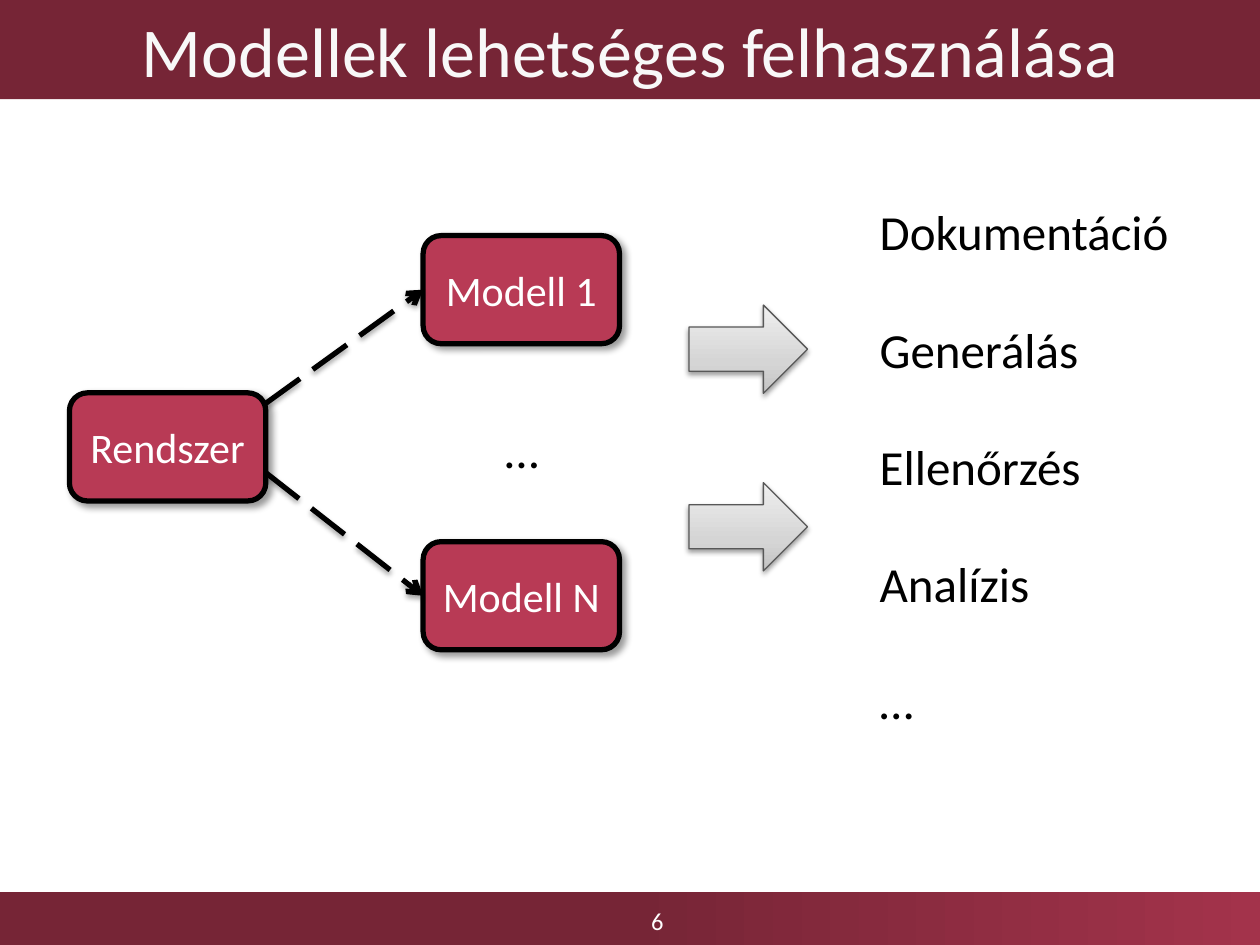
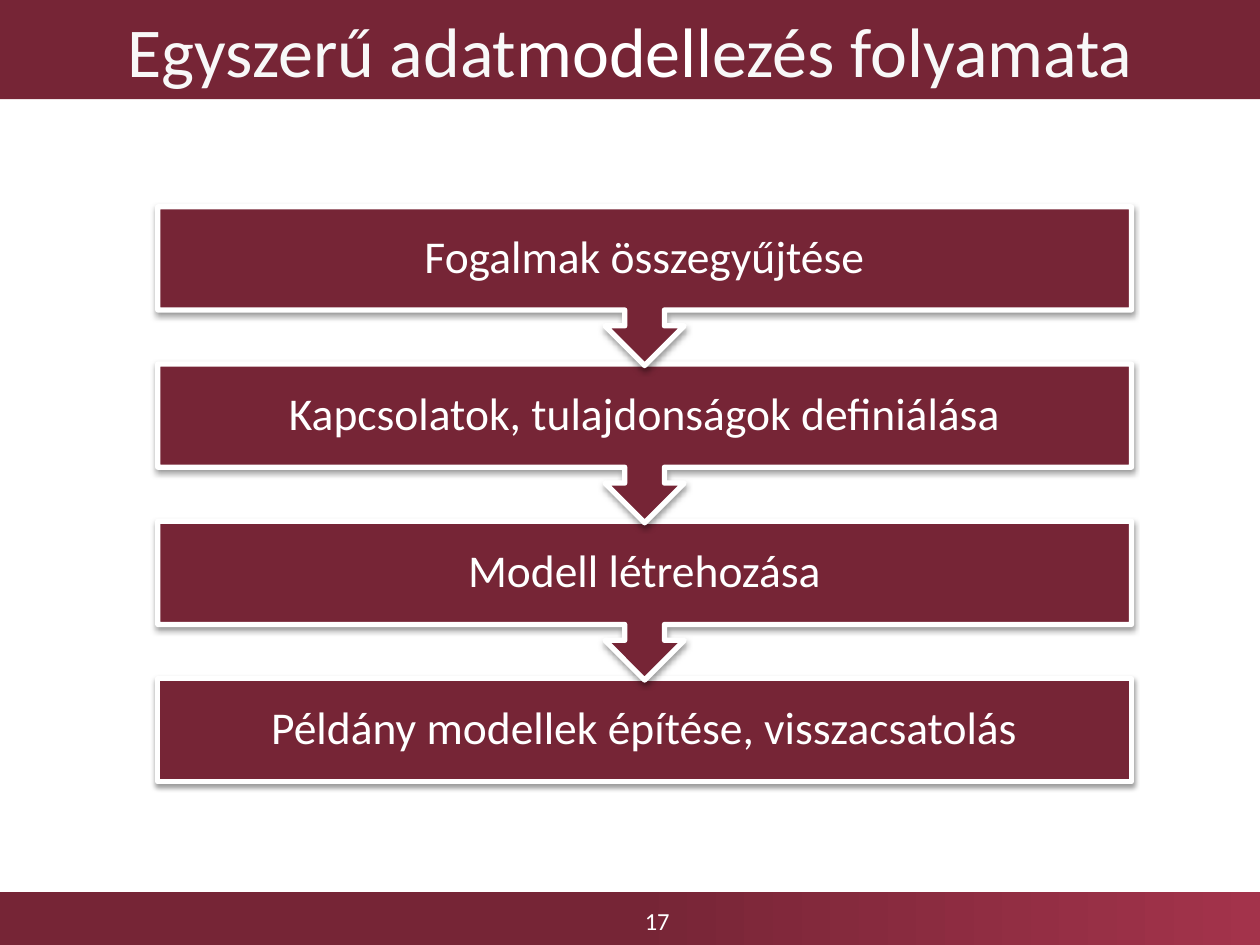
from dataclasses import dataclass
from typing import Optional, Sequence, Union

from lxml import etree
from pptx import Presentation
from pptx.dml.color import RGBColor
from pptx.enum import dml, shapes, text
from pptx.oxml.ns import qn
from pptx.util import Cm, Pt

FONT = "Calibri"
BURGUNDY = RGBColor(0x76, 0x25, 0x36)
CRIMSON = RGBColor(0xA3, 0x33, 0x4B)
ROSE = RGBColor(0xB8, 0x3A, 0x55)
WHITE = RGBColor(0xFF, 0xFF, 0xFF)
OFF_WHITE = RGBColor(0xF8, 0xF8, 0xF8)
BLACK = RGBColor(0, 0, 0)
ARROW_LINE = RGBColor(0x58, 0x58, 0x58)

LEFT, CENTER = text.PP_ALIGN.LEFT, text.PP_ALIGN.CENTER
TOP, MIDDLE = text.MSO_ANCHOR.TOP, text.MSO_ANCHOR.MIDDLE
SHAPE = shapes.MSO_SHAPE
LEFT_SIDE = 1


@dataclass(frozen=True)
class Box:
    """A rectangle measured in centimetres."""
    left: float
    top: float
    width: float
    height: float

    def lengths(self) -> tuple:
        return Cm(self.left), Cm(self.top), Cm(self.width), Cm(self.height)


@dataclass(frozen=True)
class Shadow:
    """Opacity in percent, blur and distance in points, angle in degrees."""
    opacity: float
    blur: float
    distance: float
    angle: int


@dataclass(frozen=True)
class Gradient:
    stops: tuple
    angle: int  # counter-clockwise degrees


@dataclass(frozen=True)
class Look:
    fill: Union[RGBColor, Gradient]
    line: Optional[RGBColor] = None
    line_width: float = 0
    shadow: Optional[Shadow] = None


@dataclass(frozen=True)
class ModelLink:
    """A model box and the height at which its link leaves the system box."""
    label: str
    top: float
    link_start: float


SOFT_SHADOW = Shadow(38, 3.1, 1.6, 90)
BAND = Look(Gradient(((0, BURGUNDY), (50, BURGUNDY), (100, CRIMSON)), 0))
NODE = Look(ROSE, BLACK, 3, Shadow(40, 4, 3, 45))
STEP = Look(BURGUNDY, WHITE, 3, SOFT_SHADOW)
SILVER = Gradient(((0, RGBColor(0xC4, 0xC4, 0xC4)),
                   (35, RGBColor(0xD5, 0xD5, 0xD5)),
                   (100, RGBColor(0xEF, 0xEF, 0xEF))), 90)
BLOCK_ARROW = Look(SILVER, ARROW_LINE, 0.75, SOFT_SHADOW)
LINK_SHADOW = Shadow(35, 3.1, 1.8, 90)

SLIDE_WIDTH, SLIDE_HEIGHT = 25.4, 19.05
TITLE_BOX = Box(0, 0, SLIDE_WIDTH, 2)
BAND_BOX = Box(0, 17.98, SLIDE_WIDTH, 1.07)
PAGE_BOX = Box(9.12, 18.06, 8.26, 0.99)

NODE_WIDTH, NODE_HEIGHT = 3.96, 2.18
SYSTEM_BOX = Box(1.4, 7.92, NODE_WIDTH, NODE_HEIGHT)
MODEL_LEFT = 8.53
MODELS = (ModelLink("Modell 1", 4.75, 8.13), ModelLink("Modell N", 10.92, 9.53))
ARROW_TOPS = (6.15, 9.73)
USES = ("Dokumentáció", "Generálás", "Ellenőrzés", "Analízis", "…")

STEPS = ("Fogalmak összegyűjtése", "Kapcsolatok, tulajdonságok definiálása",
         "Modell létrehozása", "Példány modellek építése, visszacsatolás")
STEP_LEFT, STEP_TOP, STEP_WIDTH = 3.18, 4.17, 19.63
STEP_PITCH, STEP_HEIGHT, CALLOUT_HEIGHT = 3.17, 2.08, 3.2


def add_color(parent, color: RGBColor):
    return etree.SubElement(parent, qn("a:srgbClr"), val=str(color))


def apply_fill(shape, fill: Union[RGBColor, Gradient]) -> None:
    if isinstance(fill, RGBColor):
        shape.fill.solid()
        shape.fill.fore_color.rgb = fill
        return
    shape.fill.gradient()
    shape.fill.gradient_angle = fill.angle
    stop_list = shape.element.spPr.find(qn("a:gradFill")).find(qn("a:gsLst"))
    for old_stop in list(stop_list):
        stop_list.remove(old_stop)
    for position, color in fill.stops:
        stop = etree.SubElement(stop_list, qn("a:gs"), pos=str(position * 1000))
        add_color(stop, color)


def apply_shadow(shape, shadow: Optional[Shadow]) -> None:
    """Replace the theme's effects; call it after the line is set."""
    effects = etree.SubElement(shape.element.spPr, qn("a:effectLst"))
    if shadow is None:
        return
    outer = etree.SubElement(
        effects, qn("a:outerShdw"), blurRad=str(Pt(shadow.blur)),
        dist=str(Pt(shadow.distance)), dir=str(shadow.angle * 60000),
        algn="ctr", rotWithShape="0")
    etree.SubElement(add_color(outer, BLACK), qn("a:alpha"),
                     val=str(int(shadow.opacity * 1000)))


def add_box(slide, kind, box: Box, look: Look):
    shape = slide.shapes.add_shape(kind, *box.lengths())
    apply_fill(shape, look.fill)
    if look.line is None:
        shape.line.fill.background()
    else:
        shape.line.color.rgb = look.line
        shape.line.width = Pt(look.line_width)
    apply_shadow(shape, look.shadow)
    return shape


def place(shape, box: Box) -> None:
    shape.left, shape.top, shape.width, shape.height = box.lengths()


def write_text(shape, *paragraphs: Union[str, Sequence], size: float,
               color: RGBColor, align=CENTER, anchor=MIDDLE, gap: float = 0,
               line_spacing: float = 1, inset: Optional[float] = None,
               wrap: bool = True) -> None:
    """Fill a shape; a paragraph is a string or a list of (string, colour) pairs."""
    frame = shape.text_frame
    frame.word_wrap = wrap
    frame.auto_size = text.MSO_AUTO_SIZE.NONE
    frame.vertical_anchor = anchor
    if inset is not None:
        frame.margin_left = frame.margin_right = Cm(inset)
        frame.margin_top = frame.margin_bottom = Cm(inset)
    for index, content in enumerate(paragraphs):
        paragraph = frame.add_paragraph() if index else frame.paragraphs[0]
        paragraph.alignment = align
        paragraph.space_before = Pt(gap if index else 0)
        paragraph.line_spacing = line_spacing
        pieces = [(content, color)] if isinstance(content, str) else content
        for piece, piece_color in pieces:
            run = paragraph.add_run()
            run.text = piece
            run.font.name = FONT
            run.font.size = Pt(size)
            run.font.color.rgb = piece_color


def add_text_box(slide, box: Box, *paragraphs: str, **text_format) -> None:
    write_text(slide.shapes.add_textbox(*box.lengths()), *paragraphs, **text_format)


def remove_bullets(shape) -> None:
    for paragraph in shape.text_frame.paragraphs:
        properties = paragraph._p.get_or_add_pPr()
        properties.set("marL", "0")
        properties.set("indent", "0")
        etree.SubElement(properties, qn("a:buNone"))


def add_framed_slide(presentation, layout_name: str, title, page: int):
    """Add a slide with the shared title bar, footer band and page number."""
    layout = presentation.slide_layouts.get_by_name(layout_name)
    slide = presentation.slides.add_slide(layout)
    add_box(slide, SHAPE.RECTANGLE, BAND_BOX, BAND)
    add_text_box(slide, PAGE_BOX, str(page), size=14, color=WHITE)
    title_shape = slide.shapes.title
    place(title_shape, TITLE_BOX)
    apply_fill(title_shape, BURGUNDY)
    write_text(title_shape, title, size=40, color=OFF_WHITE)
    return slide


def add_node(slide, label: str, box: Box):
    node = add_box(slide, SHAPE.ROUNDED_RECTANGLE, box, NODE)
    write_text(node, label, size=24, color=WHITE, wrap=False)
    return node


def add_dashed_link(slide, left: float, top: float, target) -> None:
    """Draw a dashed arrow from a point to the left side of the target."""
    link = slide.shapes.add_connector(
        shapes.MSO_CONNECTOR.STRAIGHT, Cm(left), Cm(top), target.left, target.top)
    link.end_connect(target, LEFT_SIDE)
    link.line.color.rgb = BLACK
    link.line.width = Pt(3)
    link.line.dash_style = dml.MSO_LINE.LONG_DASH
    etree.SubElement(link.element.spPr.find(qn("a:ln")), qn("a:tailEnd"), type="arrow")
    apply_shadow(link, LINK_SHADOW)


def build_model_uses(presentation) -> None:
    slide = add_framed_slide(presentation, "Title and Content",
                             "Modellek lehetséges felhasználása", 6)
    add_node(slide, "Rendszer", SYSTEM_BOX)
    for model in MODELS:
        node = add_node(slide, model.label,
                        Box(MODEL_LEFT, model.top, NODE_WIDTH, NODE_HEIGHT))
        add_dashed_link(slide, SYSTEM_BOX.left + SYSTEM_BOX.width,
                        model.link_start, node)
    add_text_box(slide, Box(9.93, 8.33, 1.6, 1.45), "…", size=28, color=BLACK,
                 align=LEFT, anchor=TOP)
    for top in ARROW_TOPS:
        add_box(slide, SHAPE.RIGHT_ARROW, Box(13.89, top, 2.39, 1.78), BLOCK_ARROW)
    uses = slide.placeholders[1]
    place(uses, Box(17.48, 3.94, 7.14, 11.02))
    write_text(uses, *USES, size=28, color=BLACK, align=LEFT, anchor=TOP, gap=33.4)
    remove_bullets(uses)


def build_modelling_process(presentation) -> None:
    title = [("Egyszerű adat", OFF_WHITE), ("modell", WHITE),
             ("ezés folyamata", OFF_WHITE)]
    slide = add_framed_slide(presentation, "Title Only", title, 17)
    last = len(STEPS) - 1
    for index in range(last, -1, -1):  # each arrow tip overlaps the step below
        kind, height = ((SHAPE.RECTANGLE, STEP_HEIGHT) if index == last
                        else (SHAPE.DOWN_ARROW_CALLOUT, CALLOUT_HEIGHT))
        box = Box(STEP_LEFT, STEP_TOP + index * STEP_PITCH, STEP_WIDTH, height)
        step = add_box(slide, kind, box, STEP)
        write_text(step, STEPS[index], size=26, color=WHITE,
                   line_spacing=0.9, inset=0.5)


def main() -> None:
    presentation = Presentation()
    presentation.slide_width = Cm(SLIDE_WIDTH)
    presentation.slide_height = Cm(SLIDE_HEIGHT)
    build_model_uses(presentation)
    build_modelling_process(presentation)
    presentation.save("out.pptx")


if __name__ == "__main__":
    main()
